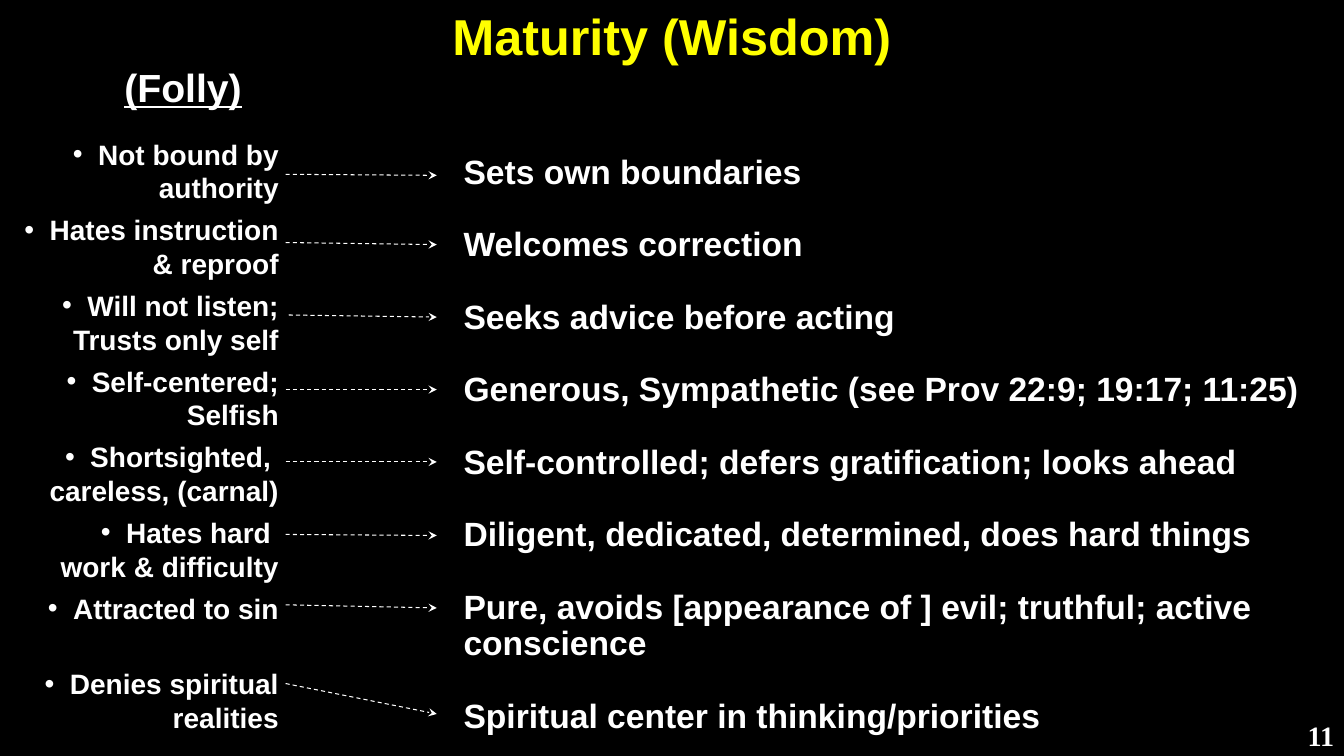
from lxml.etree import SubElement
from pptx import Presentation
from pptx.dml.color import RGBColor
from pptx.enum.dml import MSO_LINE
from pptx.enum.shapes import MSO_CONNECTOR
from pptx.enum.text import MSO_ANCHOR, PP_ALIGN
from pptx.oxml.ns import qn
from pptx.util import Pt

PX = 9525
COLORS = {"black": "000000", "white": "FFFFFF", "yellow": "FFFF00"}
TRAITS = [
    ("Not bound by authority", "Sets own boundaries", 272, 166, 167),
    ("Hates instruction & reproof", "Welcomes correction", 272, 231, 233),
    ("Will not listen; Trusts only self", "Seeks advice before acting", 275, 300, 302),
    ("Self-centered; Selfish", "Generous, Sympathetic (see Prov 22:9; 19:17; 11:25)", 272, 371, 371),
    ("Shortsighted, \vcareless, (carnal)", "Self-controlled; defers gratification; looks ahead", 272, 440, 440),
    ("Hates hard \vwork & difficulty", "Diligent, dedicated, determined, does hard things", 272, 509, 510),
    ("Attracted to sin", "Pure, avoids [appearance of ] evil; truthful; active conscience", 272, 576, 579),
    ("Denies spiritual realities", "Spiritual center in thinking/priorities", 272, 651, 680),
]
ARROW_TIP = 416


class TraitSlide:
    font = {"name": "Arial", "bold": True}

    def __init__(self, deck):
        self.slide = deck.slides.add_slide(deck.slide_layouts[6])
        fill = self.slide.background.fill
        fill.solid()
        fill.fore_color.rgb = self.color("black")

    def color(self, name):
        return RGBColor.from_string(COLORS[name])

    def text(self, box, lines, size, color="white", wrap=True,
             anchor=MSO_ANCHOR.TOP, font=None, layout=None):
        frame = self.slide.shapes.add_textbox(*(n * PX for n in box)).text_frame
        frame.word_wrap = wrap
        frame.vertical_anchor = anchor
        for index, line in enumerate(lines):
            paragraph = frame.add_paragraph() if index else frame.paragraphs[0]
            paragraph.text = line
            for key, value in (layout or {}).items():
                setattr(paragraph, key, value)
            style = {**self.font, "size": Pt(size), **(font or {})}
            for key, value in style.items():
                setattr(paragraph.font, key, value)
            paragraph.font.color.rgb = self.color(color)
            for run in paragraph.runs:
                for key, value in style.items():
                    setattr(run.font, key, value)
                run.font.color.rgb = self.color(color)
        return frame.paragraphs

    def bullets(self, box, lines, size, layout):
        paragraphs = self.text(box, lines, size, layout=layout)
        for paragraph in paragraphs:
            properties = paragraph._p.get_or_add_pPr()
            properties.set("marL", str(24 * PX))
            properties.set("indent", str(-24 * PX))
            SubElement(properties, qn("a:buFont"), typeface="Arial")
            SubElement(properties, qn("a:buChar"), char="•")
        return paragraphs

    def arrow(self, start, end):
        arrow = self.slide.shapes.add_connector(
            MSO_CONNECTOR.STRAIGHT, *(n * PX for n in (*start, *end)))
        arrow.line.color.rgb = self.color("white")
        for key, value in {"width": Pt(0.75), "dash_style": MSO_LINE.DASH}.items():
            setattr(arrow.line, key, value)
        SubElement(arrow.line._get_or_add_ln(), qn("a:tailEnd"), type="stealth")
        SubElement(arrow._element.spPr, qn("a:effectLst"))


def main():
    deck = Presentation()
    deck.slide_width, deck.slide_height = 1280 * PX, 720 * PX
    page = TraitSlide(deck)
    page.text((232, 2, 816, 64), ["Maturity (Wisdom)"], 36, "yellow",
              anchor=MSO_ANCHOR.MIDDLE, layout={"alignment": PP_ALIGN.CENTER})
    folly = page.bullets((0, 126, 275, 586), [trait[0] for trait in TRAITS], 20,
                         {"alignment": PP_ALIGN.RIGHT, "space_after": Pt(6)})
    folly[6].space_after = Pt(30)
    page.text((432, 143, 848, 568), [trait[1] for trait in TRAITS], 24,
              layout={"line_spacing": 0.9, "space_after": Pt(25.9)})
    for _, _, left, start, end in TRAITS:
        page.arrow((left, start), (ARROW_TIP, end))
    page.text((109, 56, 132, 55), ["(Folly)"], 28, wrap=False,
              font={"underline": True})
    page.text((1200, 680, 80, 40), ["11"], 20, font={"name": "Times New Roman"},
              layout={"alignment": PP_ALIGN.RIGHT})
    deck.save("out.pptx")


if __name__ == "__main__":
    main()
